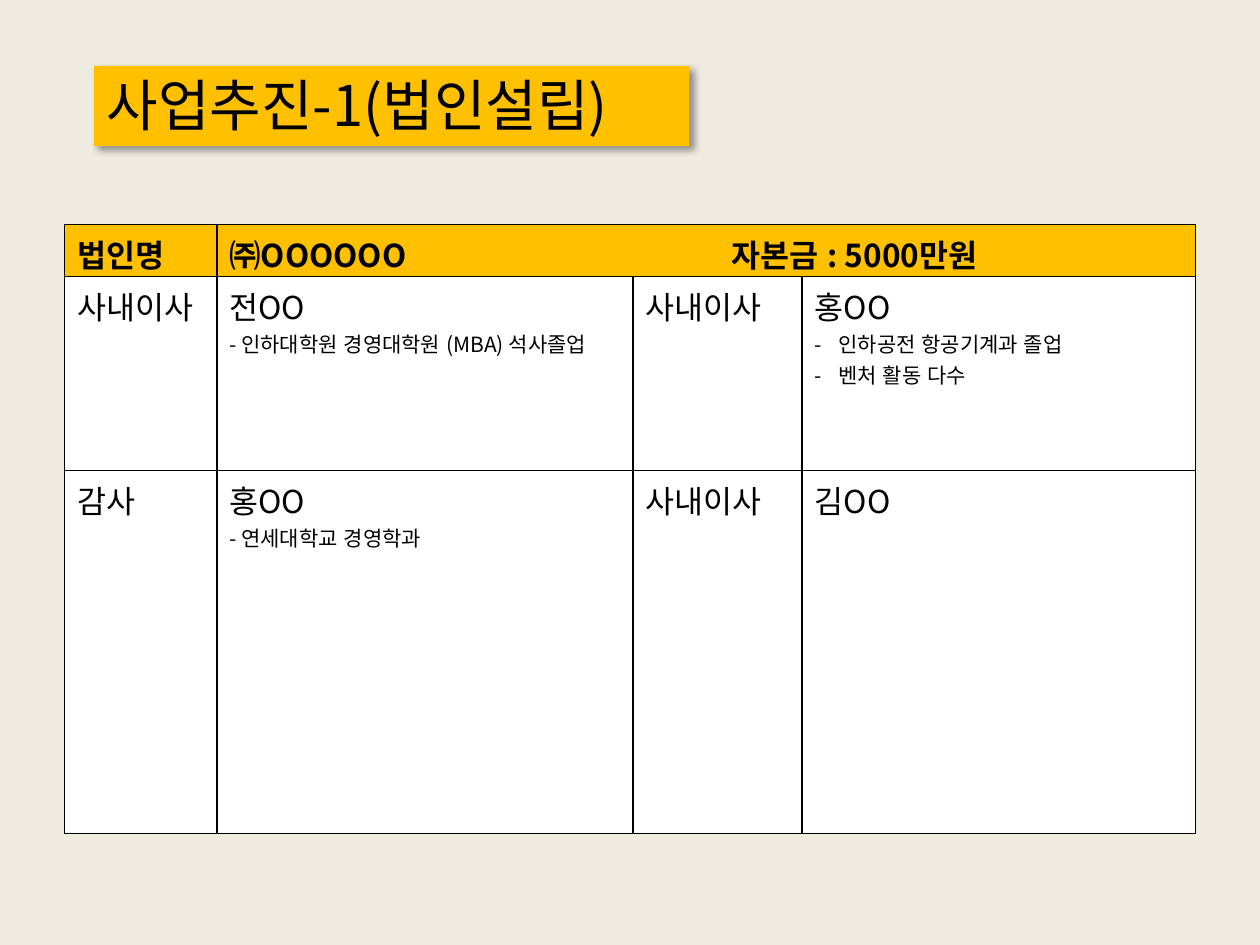
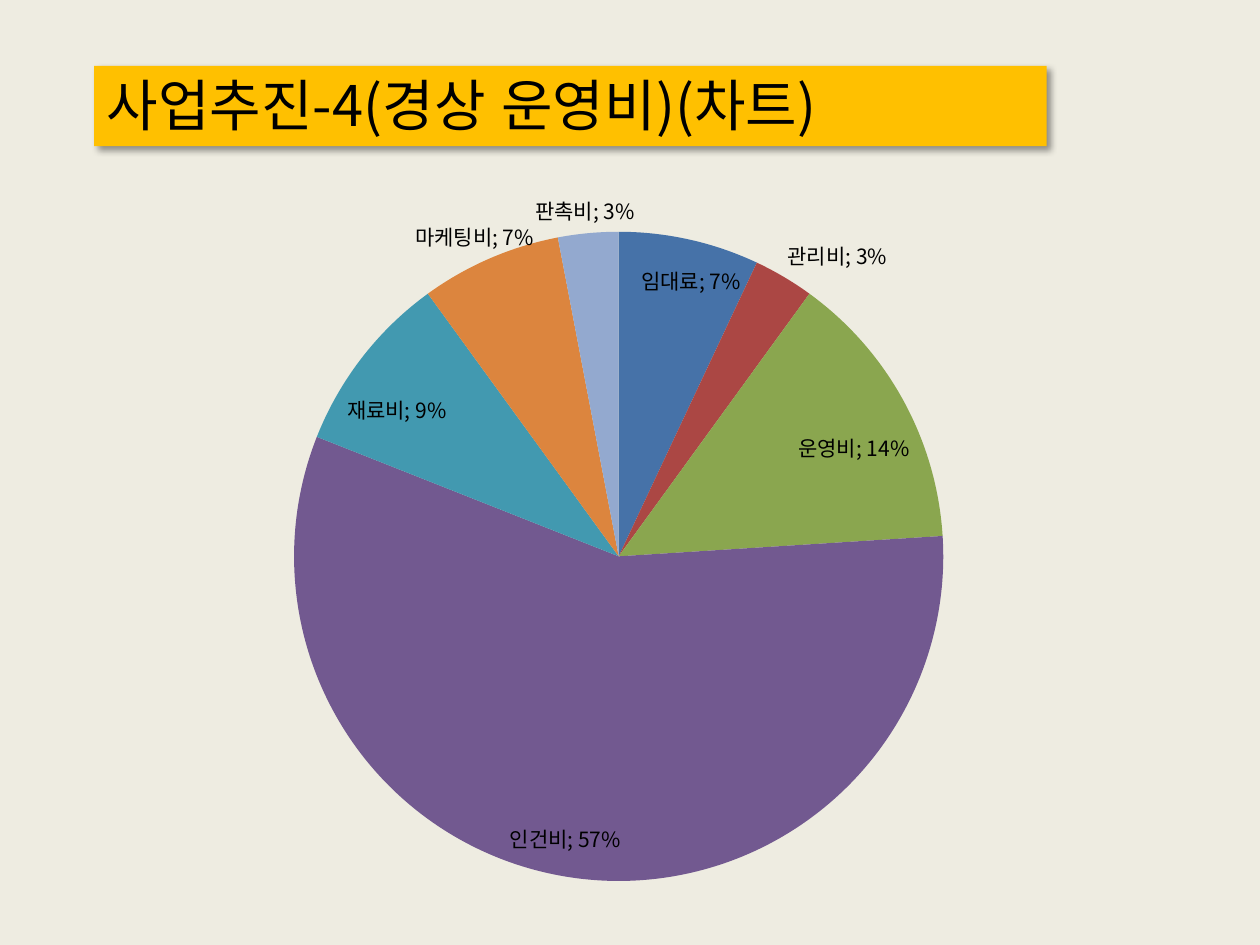
from copy import deepcopy
from dataclasses import dataclass
from typing import Any

from lxml import etree
from pptx import Presentation
from pptx.chart.data import CategoryChartData
from pptx.dml.color import RGBColor
from pptx.enum.chart import XL_CHART_TYPE, XL_LABEL_POSITION
from pptx.enum.shapes import MSO_SHAPE
from pptx.enum.text import MSO_ANCHOR, PP_ALIGN
from pptx.oxml import parse_xml
from pptx.oxml.ns import nsdecls, qn
from pptx.util import Cm, Length, Pt

PIE = XL_CHART_TYPE.PIE
BEST_FIT = XL_LABEL_POSITION.BEST_FIT
RECTANGLE = MSO_SHAPE.RECTANGLE
MIDDLE = MSO_ANCHOR.MIDDLE
LEFT = PP_ALIGN.LEFT

FONT_NAME = "Noto Sans CJK KR"
BACKGROUND = RGBColor(0xEE, 0xEC, 0xE1)
GOLD = RGBColor(0xFF, 0xC0, 0x00)
WHITE = RGBColor(0xFF, 0xFF, 0xFF)
BLACK = RGBColor(0x00, 0x00, 0x00)

HEADING_SIZE = 18
DETAIL_SIZE = 12
BULLET_INDENT = Cm(0.48)
CAPITAL_TAB = Cm(10.13)


@dataclass
class Line:
    text: str
    size: int = HEADING_SIZE
    bold: bool = False
    bullet: bool = False
    tab: Length | None = None


@dataclass
class Expense:
    name: str
    share: float
    color: RGBColor
    label_shift: float = 0


HEADER = [
    Line("법인명", bold=True),
    Line("㈜OOOOOO\t자본금 : 5000만원", bold=True, tab=CAPITAL_TAB),
]
MEMBERS = [
    [
        [Line("사내이사")],
        [Line("전OO"), Line("- 인하대학원 경영대학원 (MBA) 석사졸업", DETAIL_SIZE)],
        [Line("사내이사")],
        [
            Line("홍OO"),
            Line("인하공전 항공기계과 졸업", DETAIL_SIZE, bullet=True),
            Line("벤처 활동 다수", DETAIL_SIZE, bullet=True),
        ],
    ],
    [
        [Line("감사")],
        [Line("홍OO"), Line("- 연세대학교 경영학과", DETAIL_SIZE)],
        [Line("사내이사")],
        [Line("김OO")],
    ],
]
COLUMN_WIDTHS = [Cm(3.07), Cm(8.39), Cm(3.41), Cm(7.93)]
ROW_HEIGHTS = [Cm(1), Cm(3.91), Cm(7.32)]

EXPENSES = [
    Expense("임대료", 0.07, RGBColor(0x46, 0x72, 0xA8)),
    Expense("관리비", 0.03, RGBColor(0xAB, 0x47, 0x44)),
    Expense("운영비", 0.14, RGBColor(0x8A, 0xA6, 0x4F)),
    Expense("인건비", 0.57, RGBColor(0x72, 0x59, 0x90)),
    Expense("재료비", 0.09, RGBColor(0x42, 0x99, 0xB0)),
    Expense("마케팅비", 0.07, RGBColor(0xDC, 0x85, 0x3E), label_shift=0.04),
    Expense("판촉비", 0.03, RGBColor(0x93, 0xA9, 0xCF), label_shift=0.04),
]
PIE_LAYOUT = {"layoutTarget": "inner", "xMode": "edge", "yMode": "edge",
              "x": 0.21, "y": 0.08, "w": 0.55, "h": 0.9}


def add_east_asian_font(element: Any) -> None:
    for latin in list(element.iter(qn("a:latin"))):
        east_asian = etree.Element(qn("a:ea"))
        east_asian.set("typeface", FONT_NAME)
        latin.addnext(east_asian)


def format_font(font: Any, size: int, bold: bool = False) -> None:
    font.name = FONT_NAME
    font.size = Pt(size)
    font.bold = bold
    font.color.rgb = BLACK


def write_text(paragraph: Any, text: str, *, size: int, bold: bool = False,
               bullet: bool = False, tab: Length | None = None) -> None:
    paragraph.alignment = LEFT
    run = paragraph.add_run()
    run.text = text
    format_font(run.font, size, bold)
    run._r.get_or_add_rPr().set("lang", "ko-KR")
    add_east_asian_font(run._r)
    properties = paragraph._p.get_or_add_pPr()
    if bullet:
        properties.set("marL", str(BULLET_INDENT))
        properties.set("indent", str(-BULLET_INDENT))
        etree.SubElement(properties, qn("a:buFont")).set("typeface", FONT_NAME)
        etree.SubElement(properties, qn("a:buChar")).set("char", "-")
    if tab is not None:
        tab_list = etree.SubElement(properties, qn("a:tabLst"))
        tab_stop = etree.SubElement(tab_list, qn("a:tab"))
        tab_stop.set("pos", str(tab))
        tab_stop.set("algn", "l")


def add_shadow(shape: Any) -> None:
    shape.shadow.inherit = False
    effects = shape._element.spPr.find(qn("a:effectLst"))
    effects.append(parse_xml(
        f'<a:outerShdw {nsdecls("a")} blurRad="{Pt(4)}" dist="{Pt(3)}" '
        'dir="2700000" algn="tl" rotWithShape="0"><a:srgbClr val="000000">'
        '<a:alpha val="40000"/></a:srgbClr></a:outerShdw>'))


def add_titled_slide(presentation: Any, title: str, width: Length) -> Any:
    slide = presentation.slides.add_slide(presentation.slide_layouts[6])
    slide.background.fill.solid()
    slide.background.fill.fore_color.rgb = BACKGROUND
    band = slide.shapes.add_shape(RECTANGLE, Cm(1.9), Cm(1.33), width, Cm(1.62))
    band.fill.solid()
    band.fill.fore_color.rgb = GOLD
    band.line.fill.background()
    add_shadow(band)
    frame = band.text_frame
    frame.word_wrap = True
    frame.vertical_anchor = MIDDLE
    frame.margin_top = 0
    frame.margin_bottom = Cm(0.08)
    write_text(frame.paragraphs[0], title, size=32)
    return slide


def format_cell(cell: Any, color: RGBColor) -> None:
    properties = cell._tc.get_or_add_tcPr()
    for side in ("lnL", "lnR", "lnT", "lnB"):
        properties.append(parse_xml(
            f'<a:{side} {nsdecls("a")} w="{Pt(1)}"><a:solidFill>'
            f'<a:srgbClr val="{BLACK}"/></a:solidFill></a:{side}>'))
    cell.fill.solid()
    cell.fill.fore_color.rgb = color


def write_cell(cell: Any, lines: list[Line]) -> None:
    frame = cell.text_frame
    for index, line in enumerate(lines):
        paragraph = frame.add_paragraph() if index else frame.paragraphs[0]
        write_text(paragraph, line.text, size=line.size, bold=line.bold,
                   bullet=line.bullet, tab=line.tab)


def add_member_table(slide: Any) -> None:
    table = slide.shapes.add_table(
        len(ROW_HEIGHTS), len(COLUMN_WIDTHS), Cm(1.3), Cm(4.53),
        sum(COLUMN_WIDTHS), sum(ROW_HEIGHTS)).table
    table.first_row = False
    table.horz_banding = False
    for column, width in zip(table.columns, COLUMN_WIDTHS):
        column.width = width
    for row_index, (row, height) in enumerate(zip(table.rows, ROW_HEIGHTS)):
        row.height = height
        for cell in row.cells:
            format_cell(cell, WHITE if row_index else GOLD)
    table.cell(0, 1).merge(table.cell(0, 3))
    for column_index, line in enumerate(HEADER):
        cell = table.cell(0, column_index)
        cell.margin_top = Cm(0.12)
        cell.margin_bottom = 0
        write_cell(cell, [line])
    for row_index, member_row in enumerate(MEMBERS, start=1):
        for column_index, lines in enumerate(member_row):
            write_cell(table.cell(row_index, column_index), lines)


def make_layout(settings: dict[str, Any]) -> Any:
    layout = etree.Element(qn("c:layout"))
    manual = etree.SubElement(layout, qn("c:manualLayout"))
    for name, value in settings.items():
        etree.SubElement(manual, qn(f"c:{name}")).set("val", str(value))
    return layout


def shift_labels(labels: Any) -> None:
    element = labels._element
    shared = [child for child in element if child.tag != qn("c:showLeaderLines")]
    shifted = [(index, expense.label_shift)
               for index, expense in enumerate(EXPENSES) if expense.label_shift]
    for position, (index, shift) in enumerate(shifted):
        label = etree.Element(qn("c:dLbl"))
        etree.SubElement(label, qn("c:idx")).set("val", str(index))
        label.append(make_layout({"x": shift, "y": 0}))
        label.extend(deepcopy(shared))
        element.insert(position, label)


def format_labels(labels: Any) -> None:
    format_font(labels.font, DETAIL_SIZE)
    labels.number_format = "0%"
    labels.number_format_is_linked = False
    labels.position = BEST_FIT
    labels.show_category_name = True
    labels.show_value = True
    labels.show_percentage = False
    separator = etree.Element(qn("c:separator"))
    separator.text = "; "
    labels._element.find(qn("c:showBubbleSize")).addnext(separator)
    for leader_lines in labels._element.findall(qn("c:showLeaderLines")):
        leader_lines.set("val", "0")
    shift_labels(labels)


def add_expense_chart(slide: Any) -> None:
    data = CategoryChartData(number_format="0%")
    data.categories = [expense.name for expense in EXPENSES]
    data.add_series("Series 1", [expense.share for expense in EXPENSES])
    chart = slide.shapes.add_chart(
        PIE, Cm(0.93), Cm(3.48), Cm(23.8), Cm(14.6), data).chart
    chart.has_title = False
    chart.has_legend = False
    format_font(chart.font, HEADING_SIZE)
    plot = chart.plots[0]
    plot.vary_by_categories = True
    series = plot.series[0]
    for index, expense in enumerate(EXPENSES):
        fill = series.points[index].format.fill
        fill.solid()
        fill.fore_color.rgb = expense.color
    format_labels(series.data_labels)
    add_east_asian_font(chart._chartSpace)
    plot_area = chart._chartSpace.chart.plotArea
    for layout in plot_area.findall(qn("c:layout")):
        plot_area.remove(layout)
    plot_area.insert(0, make_layout(PIE_LAYOUT))


def main() -> None:
    presentation = Presentation()
    presentation.slide_width = Cm(25.4)
    presentation.slide_height = Cm(19.05)
    add_member_table(add_titled_slide(presentation, "사업추진-1(법인설립)", Cm(12)))
    add_expense_chart(
        add_titled_slide(presentation, "사업추진-4(경상 운영비)(차트)", Cm(19.2)))
    presentation.save("out.pptx")


if __name__ == "__main__":
    main()
